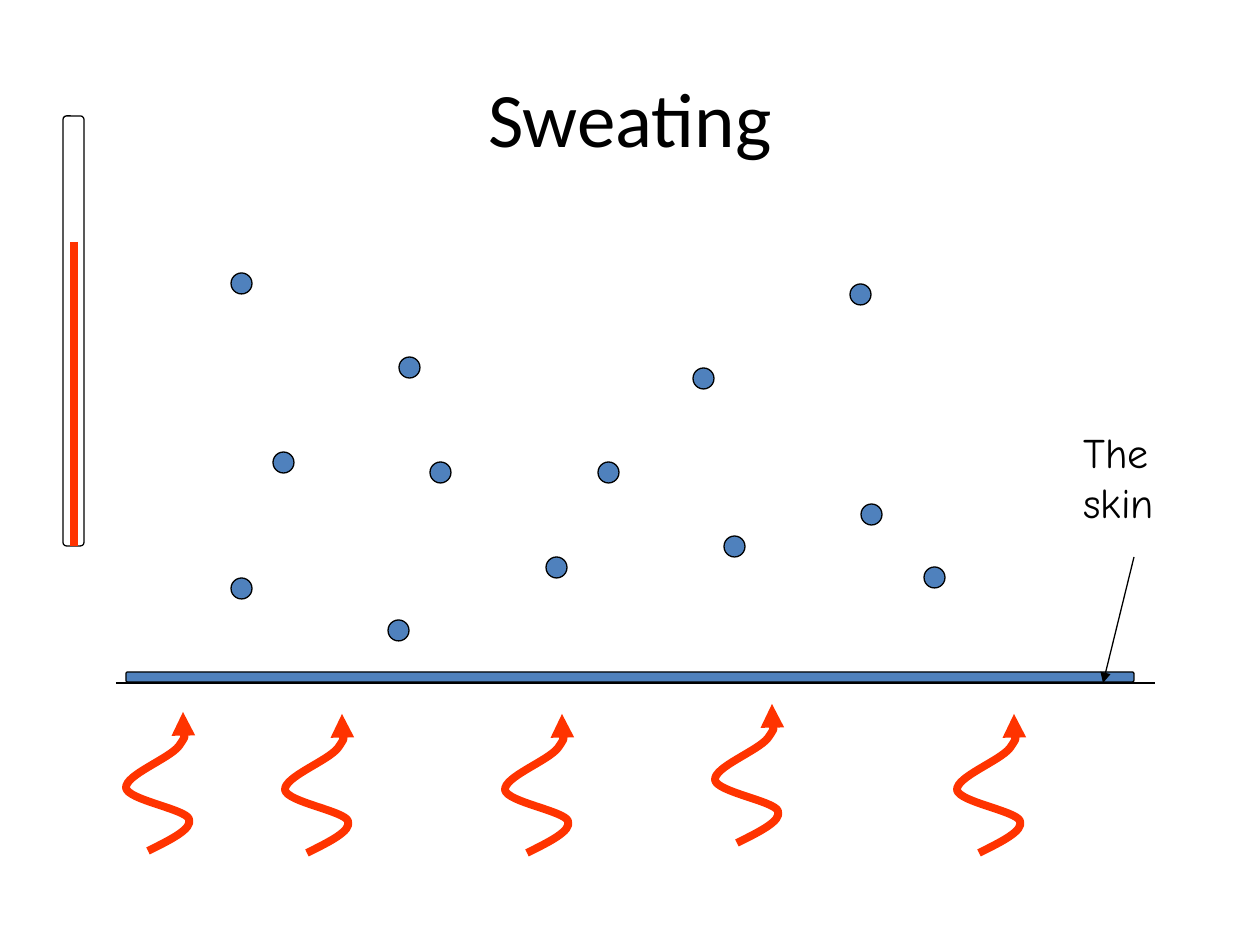
from dataclasses import dataclass

from pptx import Presentation
from pptx.dml.color import RGBColor
from pptx.enum.shapes import MSO_CONNECTOR, MSO_SHAPE
from pptx.enum.text import MSO_ANCHOR, PP_ALIGN
from pptx.oxml.ns import qn
from pptx.util import Emu, Pt
from lxml.etree import SubElement

SCALE = 914400 / 126


@dataclass(frozen=True)
class Theme:
    ink: str = "000000"
    water: str = "4F81BD"
    heat: str = "FF3300"
    head: int = 44
    label: int = 24
    thin: float = 0.75
    thick: float = 4.5
    sans: str = "Calibri"
    hand: str = "Comic Neue"


THEME = Theme()
CURVE = [(23, 139), (45, 128), (68, 117), (64, 107),
         (60, 97), (3, 88), (1, 76),
         (0, 63), (44, 47), (54, 34),
         (63, 21), (57, 6), (58, 0)]
WAVES = [(125, 712), (284, 714), (504, 714), (714, 704), (956, 714)]
DOTS = [(231, 578), (388, 620), (231, 273), (850, 284), (724, 536),
        (399, 357), (273, 452), (546, 557), (924, 567), (430, 462),
        (598, 462), (693, 368), (861, 504)]


def px(n):
    return Emu(round(n * SCALE))


def place(shape, left, top, width, height):
    shape.left, shape.top = px(left), px(top)
    shape.width, shape.height = px(width), px(height)


def write(shape, text, size, font, align=PP_ALIGN.LEFT, anchor=MSO_ANCHOR.TOP):
    frame = shape.text_frame
    frame.word_wrap = True
    frame.vertical_anchor = anchor
    frame.text = text
    line = frame.paragraphs[0]
    line.alignment = align
    line.font.size = Pt(size)
    line.font.name = font
    line.font.color.rgb = RGBColor.from_string(THEME.ink)


def stroke(shape, color, width, arrow=False):
    shape.line.color.rgb = RGBColor.from_string(color)
    shape.line.width = Pt(width)
    if arrow:
        ln = shape.line._get_or_add_ln()
        SubElement(ln, qn("a:tailEnd"), type="triangle")


def draw_line(shapes, start, end, color=THEME.ink, width=THEME.thin, arrow=False):
    ends = [px(n) for n in (*start, *end)]
    line = shapes.add_connector(MSO_CONNECTOR.STRAIGHT, *ends)
    stroke(line, color, width, arrow)
    SubElement(line._element.spPr, qn("a:effectLst"))


def draw_shape(shapes, kind, left, top, width, height, fill=None):
    shape = shapes.add_shape(kind, px(left), px(top), px(width), px(height))
    shape.shadow.inherit = False
    if fill:
        shape.fill.solid()
        shape.fill.fore_color.rgb = RGBColor.from_string(fill)
    else:
        shape.fill.background()
    stroke(shape, THEME.ink, THEME.thin)


def draw_wave(shapes, left, top):
    pen = shapes.build_freeform(*CURVE[0], scale=SCALE)
    pen.add_line_segments(CURVE[1:], close=False)
    wave = pen.convert_to_shape(px(left), px(top))
    wave.shadow.inherit = False
    wave.fill.background()
    stroke(wave, THEME.heat, THEME.thick, arrow=True)
    track = next(wave._element.iter(qn("a:path")))
    steps = track.findall(qn("a:lnTo"))
    for i in range(0, len(steps), 3):
        bend = SubElement(track, qn("a:cubicBezTo"))
        for step in steps[i:i + 3]:
            bend.append(step[0])
            track.remove(step)


def main():
    deck = Presentation()
    deck.slide_width, deck.slide_height = px(1260), px(945)
    slide = deck.slides.add_slide(deck.slide_layouts[5])
    shapes = slide.shapes

    place(shapes.title, 63, 38, 1134, 158)
    write(shapes.title, "Sweating", THEME.head, THEME.sans,
          align=PP_ALIGN.CENTER, anchor=MSO_ANCHOR.MIDDLE)

    draw_line(shapes, (116, 683), (1155, 683))
    draw_shape(shapes, MSO_SHAPE.ROUNDED_RECTANGLE, 126, 672, 1008, 10, THEME.water)

    draw_shape(shapes, MSO_SHAPE.ROUNDED_RECTANGLE, 63, 116, 21, 430)
    for top, base in ((388, 546), (242, 391)):
        draw_line(shapes, (74, top), (74, base), THEME.heat, THEME.thick)

    heat = shapes.add_group_shape().shapes
    for left, top in WAVES:
        draw_wave(heat, left, top)

    sweat = shapes.add_group_shape().shapes
    for left, top in DOTS:
        draw_shape(sweat, MSO_SHAPE.OVAL, left, top, 21, 21, THEME.water)

    label = shapes.add_textbox(px(1071), px(420), px(168), px(113))
    write(label, "The skin", THEME.label, THEME.hand)
    draw_line(shapes, (1134, 557), (1103, 683), arrow=True)

    deck.save("out.pptx")


if __name__ == "__main__":
    main()
